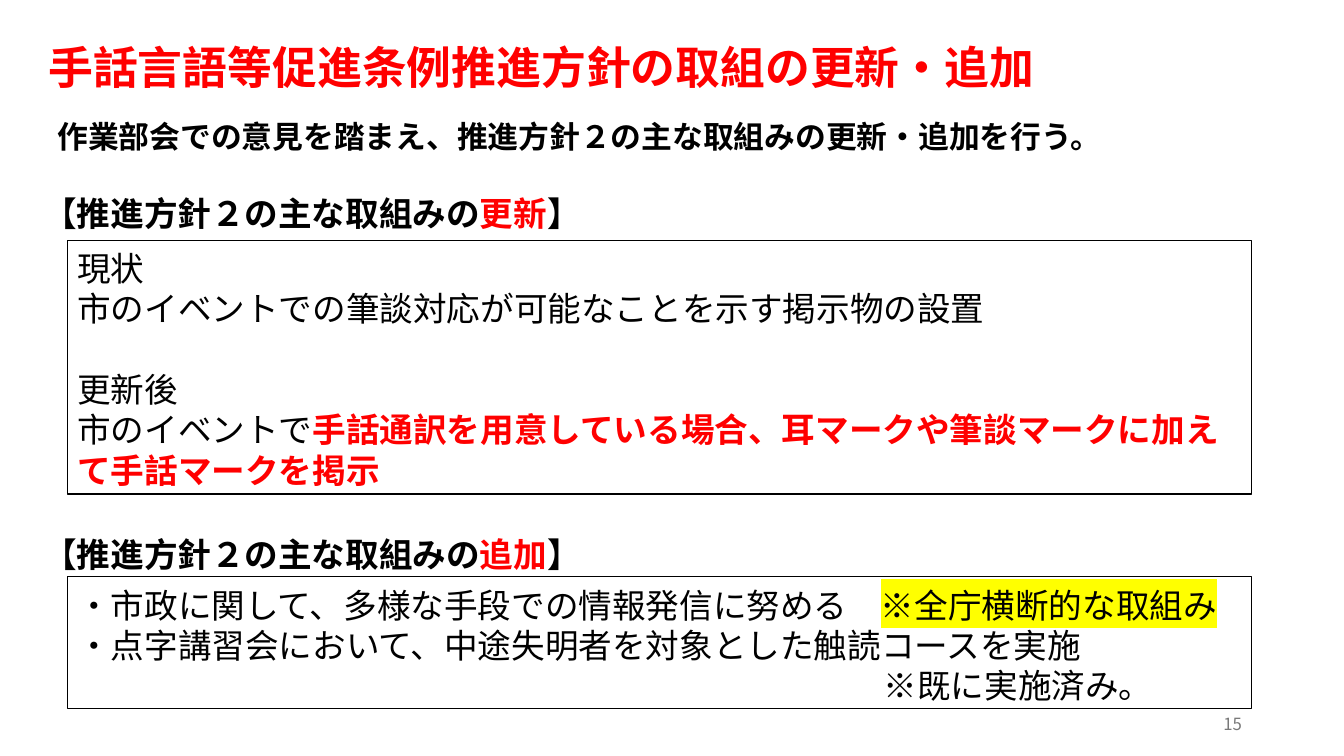
from dataclasses import dataclass

from lxml.etree import SubElement
from pptx import Presentation
from pptx.dml.color import RGBColor
from pptx.enum.shapes import MSO_SHAPE as Shape
from pptx.enum.text import MSO_ANCHOR as Anchor, PP_ALIGN as Align
from pptx.oxml.ns import qn
from pptx.util import Cm, Pt


@dataclass(frozen=True)
class Theme:
    """Colours, type sizes and font of the deck."""
    font: str = "Noto Sans CJK JP"
    ink: str = "000000"
    accent: str = "FF0000"
    muted: str = "797979"
    marker: str = "FFFF00"
    title: int = 32
    lead: int = 22
    body: int = 24
    small: int = 12
    leading: float = 1.2


THEME = Theme()


def add_span(para, text, *, size, color=THEME.ink, bold=False, marker=None):
    """Add one formatted run to a paragraph."""
    span = para.add_run()
    span.text = text
    font = span.font
    font.size, font.bold = Pt(size), bold
    font.color.rgb = RGBColor.from_string(color)
    font.name = THEME.font
    props = span._r.get_or_add_rPr()
    SubElement(props, qn("a:ea"), typeface=THEME.font)
    if marker:
        highlight = SubElement(props, qn("a:highlight"))
        SubElement(highlight, qn("a:srgbClr"), val=marker)
        props.find(qn("a:solidFill")).addnext(highlight)


def write(shape, paras, *, size, bold=False, color=THEME.ink, align=Align.LEFT,
          anchor=Anchor.TOP, side=0.25, top=0.2, bottom=0.05):
    """Fill a shape with paragraphs given as (spans, gap before, indent)."""
    frame = shape.text_frame
    frame.word_wrap = True
    frame.vertical_anchor = anchor
    frame.margin_left = frame.margin_right = Cm(side)
    frame.margin_top, frame.margin_bottom = Cm(top), Cm(bottom)
    for index, (spans, gap, indent) in enumerate(paras):
        para = frame.add_paragraph() if index else frame.paragraphs[0]
        para.alignment = align
        para.line_spacing = Pt(size * THEME.leading)
        if gap:
            para.space_before = Pt(gap)
        if indent:
            para._p.get_or_add_pPr().set("marL", str(Pt(indent)))
        for text, style in spans:
            add_span(para, text, **{"size": size, "bold": bold, "color": color, **style})


def line(*spans, gap=0, indent=0):
    """Describe one paragraph made of plain strings or (text, style) pairs."""
    pairs = [(span, {}) if isinstance(span, str) else span for span in spans]
    return pairs, gap, indent


def add_label(page, box, *spans, **style):
    """Place a single-paragraph text box."""
    shape = page.shapes.add_textbox(*map(Cm, box))
    write(shape, [line(*spans)], **style)


def add_section(page, box, topic, paras, *, rise):
    """Place an outlined frame with its heading above it."""
    left, top, width, height = box
    add_label(page, (left - 0.86, top - rise, 14.12, 1.27),
              "【推進方針２の主な取組みの", (topic, {"color": THEME.accent}), "】",
              size=THEME.body, bold=True)
    frame = page.shapes.add_shape(Shape.RECTANGLE, *map(Cm, box))
    frame.shadow.inherit = False
    frame.fill.background()
    frame.line.color.rgb = RGBColor.from_string(THEME.ink)
    frame.line.width = Pt(0.75)
    write(frame, paras, size=THEME.body)


def add_header(page, box):
    """Place the title and the lead sentence."""
    left, top, width, height = box
    add_label(page, (left, top, width, 2.79),
              "手話言語等促進条例推進方針の取組の更新・追加", size=THEME.title, bold=True,
              color=THEME.accent, anchor=Anchor.MIDDLE, side=1.22, top=0.68, bottom=0.1)
    add_label(page, (left + 1.32, top + 2.77, 28.32, height - 2.77),
              "作業部会での意見を踏まえ、推進方針２の主な取組みの更新・追加を行う。",
              size=THEME.lead, bold=True, side=0.13)


def build_page(page):
    """Place all regions of the slide."""
    accent = {"color": THEME.accent, "bold": True}
    add_header(page, (0, 0, 31.55, 3.96))
    add_section(page, (1.7, 6.05, 29.85, 6.4), "更新", [
        line("現状"),
        line("市のイベントでの筆談対応が可能なことを示す掲示物の設置"),
        line("更新後", gap=THEME.body * THEME.leading),
        line("市のイベントで",
             ("手話通訳を用意している場合、耳マークや筆談マークに加えて手話マークを掲示", accent)),
    ], rise=1.38)
    add_section(page, (1.7, 14.53, 29.85, 3.33), "追加", [
        line("・市政に関して、多様な手段での情報発信に努める　",
             ("※全庁横断的な取組み", {"marker": THEME.marker})),
        line("・点字講習会において、中途失明者を対象とした触読コースを実施"),
        line("※既に実施済み。", indent=24 * THEME.body),
    ], rise=1.27)
    add_label(page, (23.93, 17.65, 7.62, 1.02), "15", size=THEME.small,
              color=THEME.muted, align=Align.RIGHT, anchor=Anchor.MIDDLE)


def main():
    """Build and save the deck."""
    deck = Presentation()
    deck.slide_width, deck.slide_height = Cm(33.87), Cm(19.05)
    build_page(deck.slides.add_slide(deck.slide_layouts[6]))
    deck.save("out.pptx")


if __name__ == "__main__":
    main()
